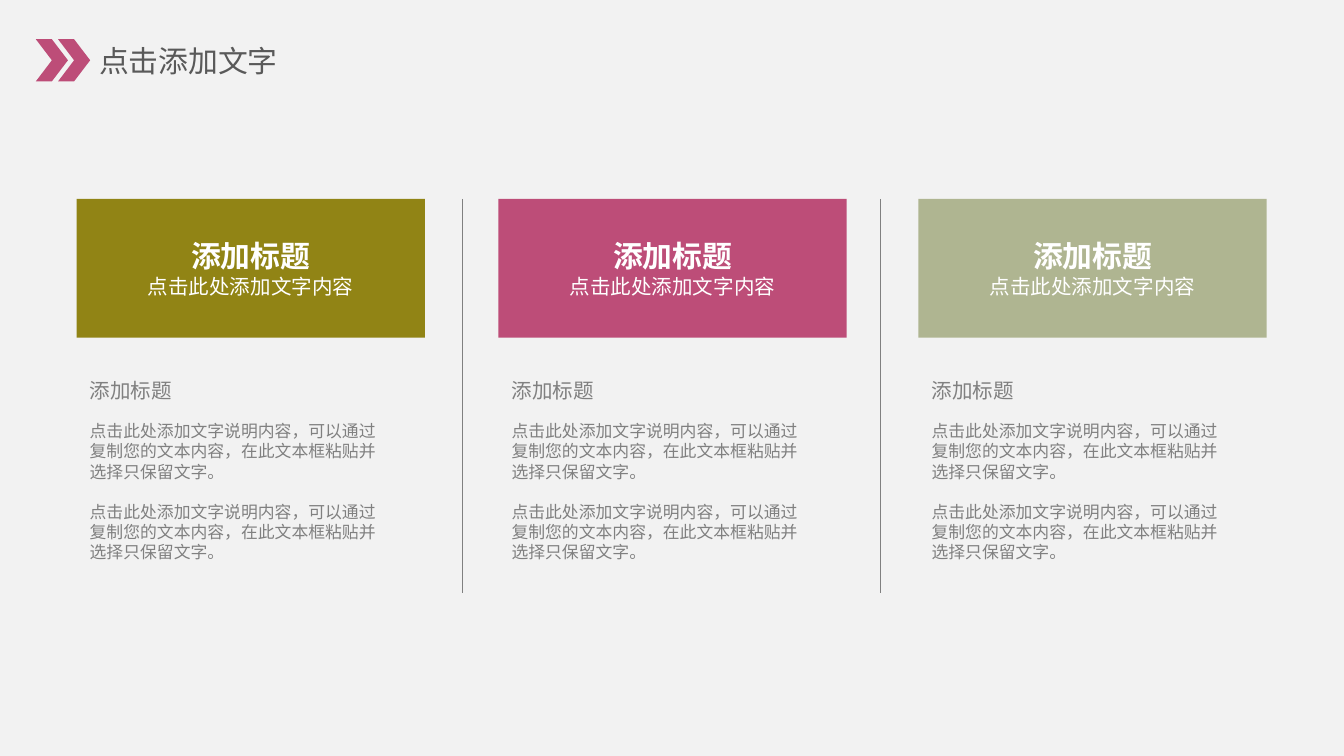
from lxml.etree import SubElement
from pptx import Presentation
from pptx.dml.color import RGBColor
from pptx.enum.shapes import MSO_CONNECTOR as Connector, MSO_SHAPE as Preset
from pptx.enum.text import MSO_ANCHOR as Anchor, PP_ALIGN as Align
from pptx.oxml.ns import qn
from pptx.util import Pt

FONT = "Noto Sans CJK SC"
COLORS = {
    "background": "F2F2F2",
    "olive": "918415",
    "rose": "BD4D78",
    "sage": "AFB591",
    "title": "595959",
    "grey": "808080",
    "white": "FFFFFF",
}
HEADING = "添加标题"
SUBTITLE = "点击此处添加文字内容"
BODY = "点击此处添加文字说明内容，可以通过复制您的文本内容，在此文本框粘贴并选择只保留文字。"

COLUMNS = [(41, "olive"), (267, "rose"), (492, "sage")]
COLUMN_TOP = 106.5
COLUMN_WIDTH = 186.6
DIVIDERS = [247.7, 471.6]
DIVIDER_HEIGHT = 211


def color(name):
    return RGBColor.from_string(COLORS[name])


def write(frame, text, size, ink="grey", bold=False, align=Align.LEFT, after=0):
    paragraph = frame.paragraphs[0]
    if paragraph.runs:
        paragraph = frame.add_paragraph()
    paragraph.alignment = align
    paragraph.line_spacing = Pt(size * 1.2)
    paragraph.space_after = Pt(after)
    run = paragraph.add_run()
    run.text = text
    run.font.size = Pt(size)
    run.font.bold = bold
    run.font.name = FONT
    run.font.color.rgb = color(ink)
    SubElement(run.font._element, qn("a:ea"), typeface=FONT)


def add_text_area(slide, left, top, width, height, wrap=True):
    area = slide.shapes.add_textbox(Pt(left), Pt(top), Pt(width), Pt(height))
    area.text_frame.word_wrap = wrap
    return area.text_frame


def add_block(slide, preset, left, top, width, height, fill):
    block = slide.shapes.add_shape(preset, Pt(left), Pt(top), Pt(width), Pt(height))
    block.shadow.inherit = False
    block.fill.solid()
    block.fill.fore_color.rgb = color(fill)
    block.line.fill.background()
    return block


def add_header(slide, left, top, width, height):
    for offset in (0, 11.9):
        add_block(slide, Preset.CHEVRON, left + offset, top, 17.2, height, "rose")
    title = add_text_area(slide, left + 29, top - 1, width - 29, 24.5)
    title.margin_left = title.margin_right = Pt(5)
    title.margin_top = title.margin_bottom = Pt(2.9)
    write(title, "点击添加文字", size=16, ink="title")


def add_divider(slide, x, top, height):
    divider = slide.shapes.add_connector(
        Connector.STRAIGHT, Pt(x), Pt(top), Pt(x), Pt(top + height)
    )
    divider.line.color.rgb = color("grey")
    divider.line.width = Pt(0.25)
    SubElement(divider._element.spPr, qn("a:effectLst"))


def add_column(slide, left, top, width, fill):
    banner = add_block(slide, Preset.RECTANGLE, left, top, width, 74.4, fill).text_frame
    banner.word_wrap = True
    banner.vertical_anchor = Anchor.MIDDLE
    write(banner, HEADING, size=16, ink="white", bold=True, align=Align.CENTER)
    write(banner, SUBTITLE, size=11, ink="white", align=Align.CENTER)

    heading = add_text_area(slide, left, top + 92.4, 59, 20.9, wrap=False)
    write(heading, HEADING, size=11)

    body = add_text_area(slide, left, top + 115.5, 172.8, 83.5)
    write(body, BODY, size=9, after=10.8)
    write(body, BODY, size=9)


def main():
    deck = Presentation()
    deck.slide_width, deck.slide_height = Pt(720), Pt(405)
    slide = deck.slides.add_slide(deck.slide_layouts[6])
    slide.background.fill.solid()
    slide.background.fill.fore_color.rgb = color("background")

    add_header(slide, 19.2, 21, 170, 22.6)
    for x in DIVIDERS:
        add_divider(slide, x, COLUMN_TOP, DIVIDER_HEIGHT)
    for left, fill in COLUMNS:
        add_column(slide, left, COLUMN_TOP, COLUMN_WIDTH, fill)
    deck.save("out.pptx")


if __name__ == "__main__":
    main()
